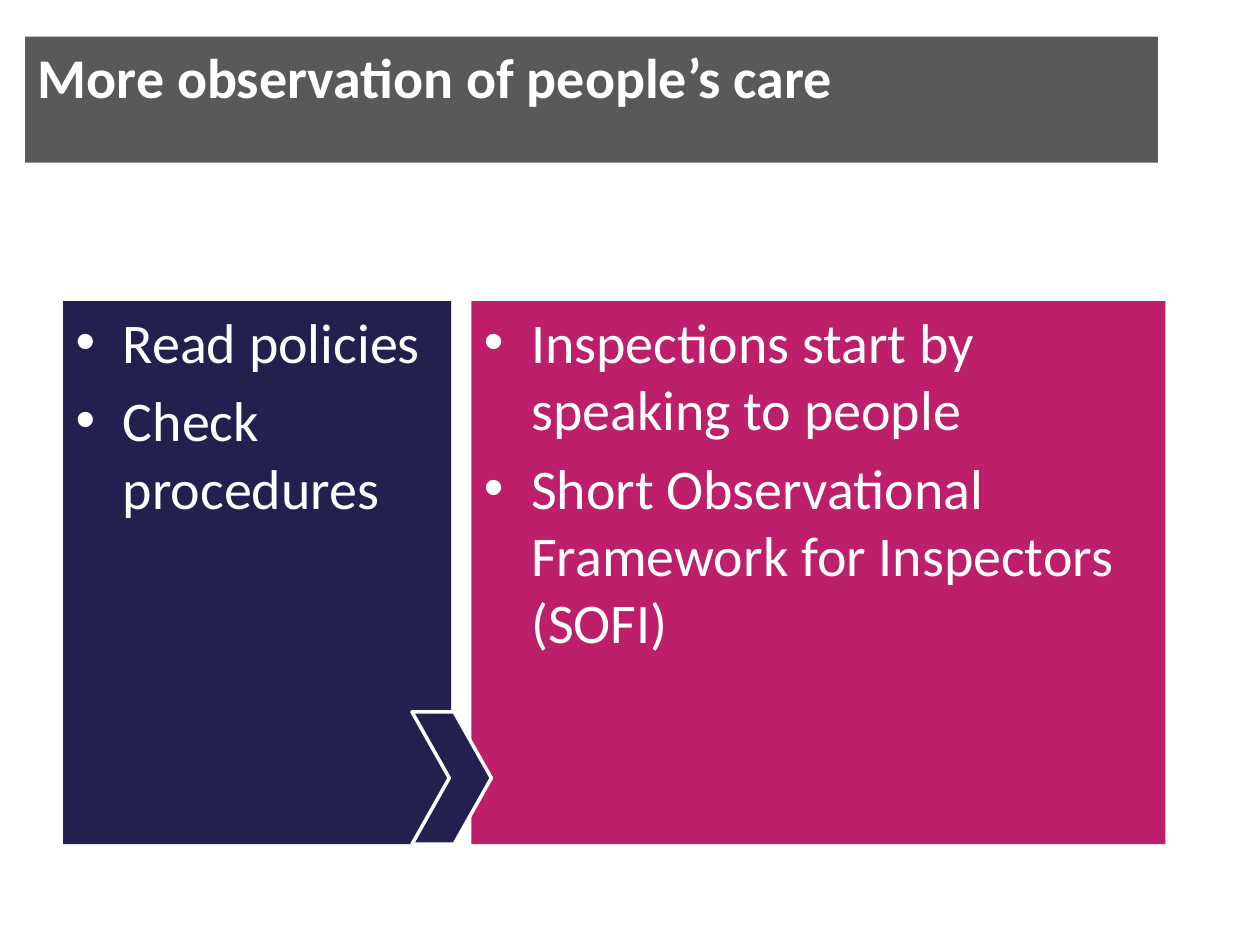
from dataclasses import dataclass

from pptx import Presentation
from pptx import util as u
from pptx.dml.color import RGBColor
from pptx.enum import shapes, text

WIDE, HIGH = 10, 7.5


@dataclass(frozen=True)
class Theme:
    navy: str = "232050"
    pink: str = "BE1F6A"
    grey: str = "595959"
    white: str = "FFFFFF"
    font: str = "Calibri"
    size: float = 32
    gap: float = 6.4
    edge: float = 2


@dataclass(frozen=True)
class Box:
    """Place and size in inches."""
    left: float
    top: float
    width: float
    height: float


@dataclass(frozen=True)
class Panel:
    box: Box
    fill: str
    lines: tuple[str, ...]
    bold: bool = False


THEME = Theme()
TOP, TALL = 2.39, 4.31
TITLE = Panel(Box(0.2, 0.29, 8.99, 1), THEME.grey,
              ("More observation of people’s care",), True)
PANELS = (
    Panel(Box(0.5, TOP, 3.08, TALL), THEME.navy,
          ("Read policies", "Check procedures")),
    Panel(Box(3.74, TOP, 5.51, TALL), THEME.pink,
          ("Inspections start by speaking to people",
           "Short Observational Framework for Inspectors (SOFI)")),
)
ARROW = Box(3.27, 5.65, 0.63, 1.05)


def place(shape, box: Box, fill: str) -> None:
    shape.left, shape.top = u.Inches(box.left), u.Inches(box.top)
    shape.width, shape.height = u.Inches(box.width), u.Inches(box.height)
    shape.fill.solid()
    shape.fill.fore_color.rgb = RGBColor.from_string(fill)


def draw_panel(holder, panel: Panel) -> None:
    place(holder, panel.box, panel.fill)
    frame = holder.text_frame
    frame.word_wrap = True
    frame.auto_size = text.MSO_AUTO_SIZE.NONE
    frame.vertical_anchor = text.MSO_ANCHOR.TOP
    for row, line in enumerate(panel.lines):
        para = frame.add_paragraph() if row else frame.paragraphs[0]
        para.alignment = text.PP_ALIGN.LEFT
        para.space_before = u.Pt(THEME.gap if row else 0)
        run = para.add_run()
        run.text = line
        run.font.name = THEME.font
        run.font.size = u.Pt(THEME.size)
        run.font.bold = panel.bold
        run.font.color.rgb = RGBColor.from_string(THEME.white)


def draw_arrow(slide, box: Box) -> None:
    arrow = slide.shapes.add_shape(shapes.MSO_SHAPE.CHEVRON, 0, 0, 0, 0)
    place(arrow, box, THEME.navy)
    arrow.adjustments[0] = 0.47
    arrow.shadow.inherit = False
    arrow.line.color.rgb = RGBColor.from_string(THEME.white)
    arrow.line.width = u.Pt(THEME.edge)


def main() -> None:
    deck = Presentation()
    deck.slide_width, deck.slide_height = u.Inches(WIDE), u.Inches(HIGH)
    layout = deck.slide_layouts.get_by_name("Two Content")
    slide = deck.slides.add_slide(layout)
    for holder, panel in zip(slide.placeholders, (TITLE, *PANELS)):
        draw_panel(holder, panel)
    draw_arrow(slide, ARROW)
    deck.save("out.pptx")


if __name__ == "__main__":
    main()
